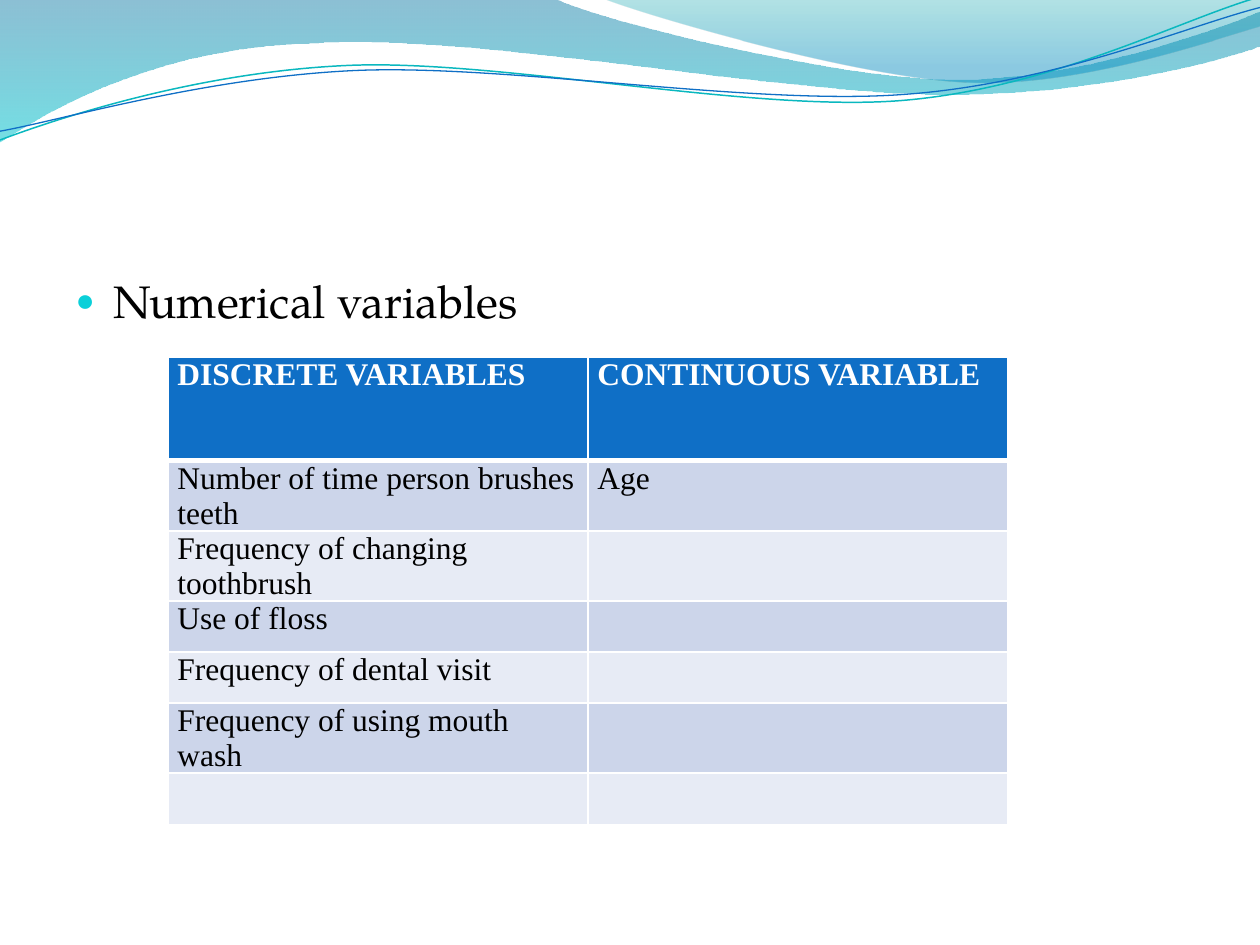
"""Build a slide on numerical variables with a wave header and a table."""
from dataclasses import dataclass

from lxml import etree
from pptx import Presentation
from pptx.dml.color import RGBColor
from pptx.oxml.ns import qn
from pptx.util import Pt

WHITE = RGBColor(0xFF, 0xFF, 0xFF)
BLACK = RGBColor(0x00, 0x00, 0x00)
BLUE = RGBColor(0x0F, 0x6F, 0xC6)
TEAL = RGBColor(0x0A, 0xB8, 0xBF)
BULLET_CYAN = RGBColor(0x0B, 0xD0, 0xD9)
DEEP_BLUE = RGBColor(0x00, 0x74, 0xA1)
AQUA = RGBColor(0x00, 0xC6, 0xCF)
SEA_GREEN = RGBColor(0x00, 0xA1, 0xA9)
SKY_BLUE = RGBColor(0x00, 0x8B, 0xBF)
BANDS = (RGBColor(0xCC, 0xD5, 0xEA), RGBColor(0xE7, 0xEB, 0xF5))

BODY_FONT = "TeX Gyre Pagella"
TABLE_FONT = "Times New Roman"


@dataclass(frozen=True)
class Stop:
    position: float
    color: RGBColor
    opacity: int


@dataclass(frozen=True)
class Wave:
    start: tuple
    segments: tuple
    stops: tuple


@dataclass(frozen=True)
class Ripple:
    start: tuple
    segments: tuple
    color: RGBColor
    width: float


WAVES = (
    Wave((0, 0), (
        ((317, -0.7),),
        ((343, 12), (478, 45), (546, 45.4)),
        ((614, 45.4), (690, 19), (720, 6.5)),
        ((720.7, 26),),
        ((708, 32), (626, 55), (537, 54)),
        ((448, 54), (275, 20), (185, 24.5)),
        ((93, 26), (33, 60), (-0.7, 81.4)),
    ), (Stop(0, DEEP_BLUE, 45), Stop(1, AQUA, 55))),
    Wave((345, -0.7), (
        ((366, 8), (491, 45), (554, 47)),
        ((616, 49.7), (692, 23), (720, 15)),
        ((720, 0),),
    ), (Stop(0, SEA_GREEN, 30), Stop(0.8, SKY_BLUE, 45))),
)
RIPPLES = (
    Ripple((0, 80), (
        ((34.6, 67), (114, 41), (199.4, 37.4)),
        ((284.4, 33.8), (427, 64), (513.4, 57.6)),
        ((600, 51), (675, 11), (718.6, -1.4)),
    ), TEAL, 0.85),
    Ripple((0, 75), (
        ((34, 69), (118, 44), (203.8, 40.3)),
        ((290, 36.7), (430, 60.5), (516.2, 54)),
        ((602, 48), (678, 15), (720, 4.3)),
    ), BLUE, 0.75),
)

HEADER_HEIGHT, TALL, SHORT = 59.3, 40, 29.2
ROWS = (
    (HEADER_HEIGHT, "DISCRETE VARIABLES", "CONTINUOUS VARIABLE"),
    (TALL, "Number of time person brushes teeth", "Age"),
    (TALL, "Frequency of changing toothbrush", ""),
    (SHORT, "Use of floss", ""),
    (SHORT, "Frequency of dental visit", ""),
    (TALL, "Frequency of using mouth wash", ""),
    (SHORT, "", ""),
)


def add_outline(slide, start: tuple, segments: tuple, close: bool):
    """Add a shadowless freeform of straight and cubic segments."""
    builder = slide.shapes.build_freeform(Pt(start[0]), Pt(start[1]))
    ends = [(Pt(x), Pt(y)) for x, y in (segment[-1] for segment in segments)]
    builder.add_line_segments(ends, close=close)
    shape = builder.convert_to_shape()
    shape.shadow.inherit = False
    lines = list(shape._element.spPr.iter(qn("a:lnTo")))
    for line, segment in zip(lines, segments):
        if len(segment) == 3:
            curve = etree.Element(qn("a:cubicBezTo"))
            for x, y in segment:
                etree.SubElement(curve, qn("a:pt"), x=str(Pt(x) - shape.left),
                                 y=str(Pt(y) - shape.top))
            line.getparent().replace(line, curve)
    return shape


def add_wave(slide, wave: Wave) -> None:
    """Add a closed wave with a translucent vertical gradient."""
    shape = add_outline(slide, wave.start, wave.segments, True)
    shape.line.fill.background()
    shape.fill.gradient()
    shape.fill.gradient_angle = 270
    for gradient_stop, stop in zip(shape.fill.gradient_stops, wave.stops):
        gradient_stop.position = stop.position
        gradient_stop.color.rgb = stop.color
    colors = shape._element.spPr.iter(qn("a:srgbClr"))
    for color, stop in zip(colors, wave.stops):
        etree.SubElement(color, qn("a:alpha"), val=str(stop.opacity * 1000))


def add_ripple(slide, ripple: Ripple) -> None:
    """Add an open curved line."""
    shape = add_outline(slide, ripple.start, ripple.segments, False)
    shape.fill.background()
    shape.line.color.rgb = ripple.color
    shape.line.width = Pt(ripple.width)


def write_text(text_frame, text: str, *, size: float, font: str,
               color: RGBColor = BLACK, bold: bool = False):
    """Write one formatted paragraph and return it."""
    paragraph = text_frame.paragraphs[0]
    run = paragraph.add_run()
    run.text = text
    run.font.size, run.font.name, run.font.bold = Pt(size), font, bold
    run.font.color.rgb = color
    return paragraph


def add_bullet_text(slide, text: str) -> None:
    """Fill the body placeholder with one bulleted line."""
    body = slide.placeholders[1]
    body.left, body.top, body.width, body.height = Pt(36), Pt(152.6), Pt(648), Pt(345.6)
    paragraph = write_text(body.text_frame, text, size=26, font=BODY_FONT)
    paragraph.space_before = Pt(5.2)
    properties = paragraph._p.get_or_add_pPr()
    properties.set("marL", str(Pt(21.6)))
    properties.set("indent", str(Pt(-21.6)))
    bullet_color = etree.SubElement(properties, qn("a:buClr"))
    etree.SubElement(bullet_color, qn("a:srgbClr"), val=str(BULLET_CYAN))
    etree.SubElement(properties, qn("a:buSzPct"), val="70000")
    etree.SubElement(properties, qn("a:buChar"), char="●")


def set_borders(cell, **widths: float) -> None:
    """Draw white cell borders of the given widths."""
    properties = cell._tc.get_or_add_tcPr()
    for index, (side, width) in enumerate(widths.items()):
        line = etree.Element(qn(f"a:ln{side}"), w=str(Pt(width)))
        fill = etree.SubElement(line, qn("a:solidFill"))
        etree.SubElement(fill, qn("a:srgbClr"), val=str(WHITE))
        properties.insert(index, line)


def add_variable_table(slide) -> None:
    """Add the table of discrete and continuous variables."""
    height = sum(row[0] for row in ROWS)
    table = slide.shapes.add_table(
        len(ROWS), 2, Pt(96), Pt(204), Pt(480), Pt(height)).table
    for row_index, (row_height, *texts) in enumerate(ROWS):
        header = row_index == 0
        table.rows[row_index].height = Pt(row_height)
        for column_index, text in enumerate(texts):
            cell = table.cell(row_index, column_index)
            cell.margin_left = cell.margin_right = Pt(5.4)
            cell.margin_top = cell.margin_bottom = Pt(0)
            cell.fill.solid()
            cell.fill.fore_color.rgb = BLUE if header else BANDS[(row_index - 1) % 2]
            set_borders(cell, L=1, R=1, T=3 if row_index == 1 else 1, B=3 if header else 1)
            if text:
                paragraph = write_text(
                    cell.text_frame, text, size=18, font=TABLE_FONT,
                    color=WHITE if header else BLACK, bold=header)
                paragraph.line_spacing = Pt(20)


def main() -> None:
    """Build and save the presentation."""
    presentation = Presentation()
    presentation.slide_width, presentation.slide_height = Pt(720), Pt(540)
    slide = presentation.slides.add_slide(presentation.slide_layouts[1])
    title = slide.shapes.title._element
    title.getparent().remove(title)
    for wave in WAVES:
        add_wave(slide, wave)
    for ripple in RIPPLES:
        add_ripple(slide, ripple)
    add_bullet_text(slide, "Numerical variables")
    add_variable_table(slide)
    presentation.save("out.pptx")


if __name__ == "__main__":
    main()
